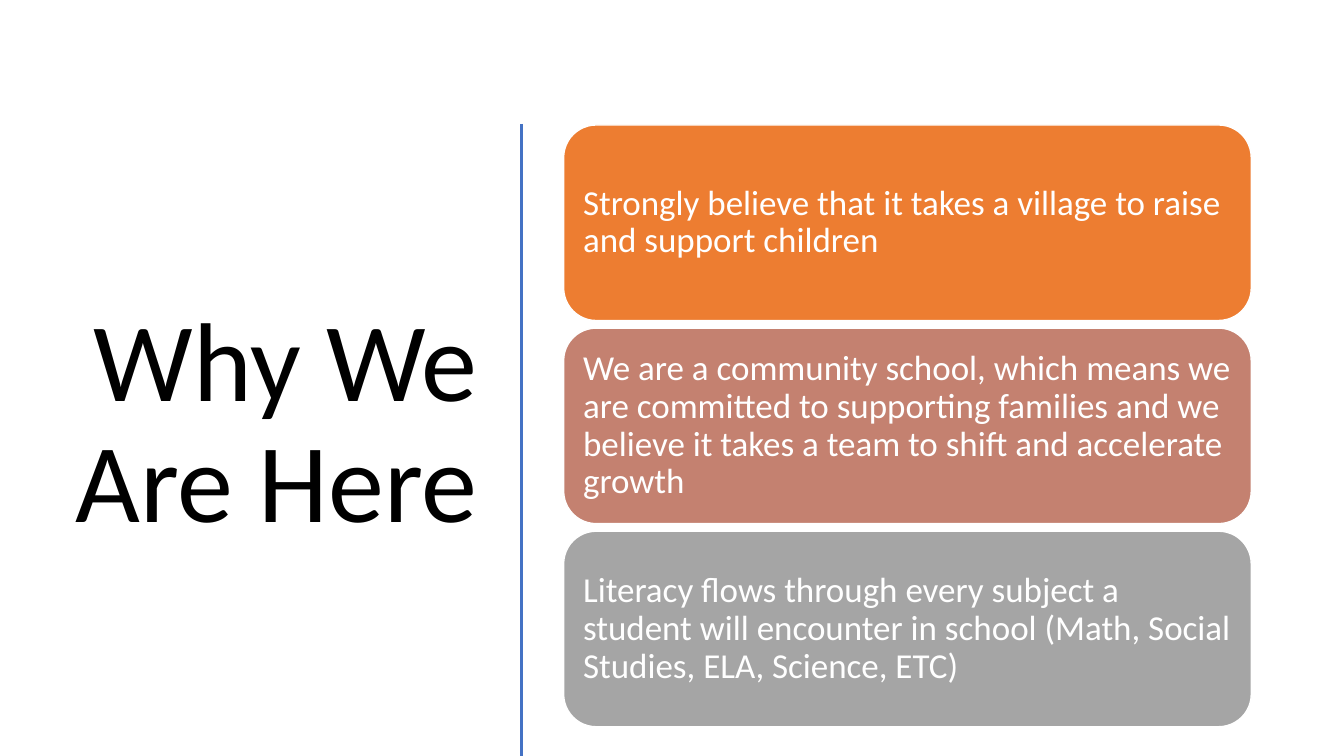
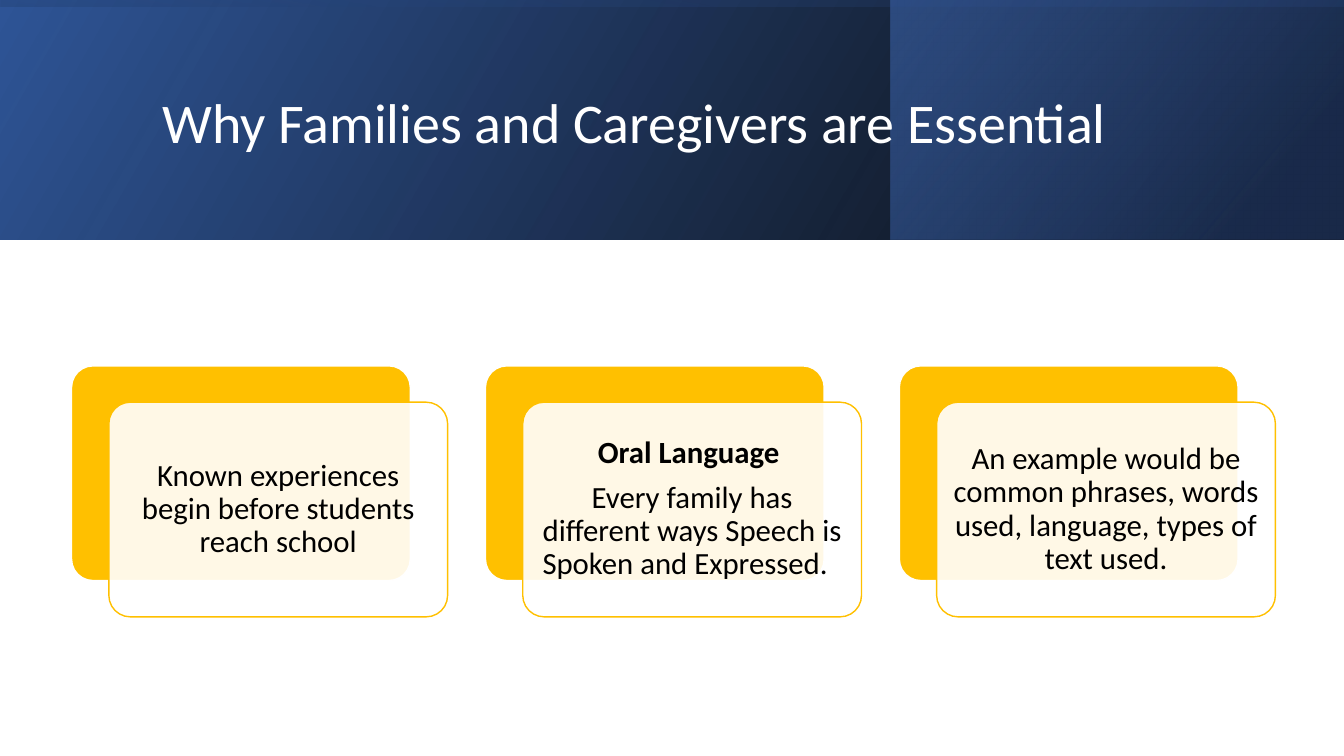
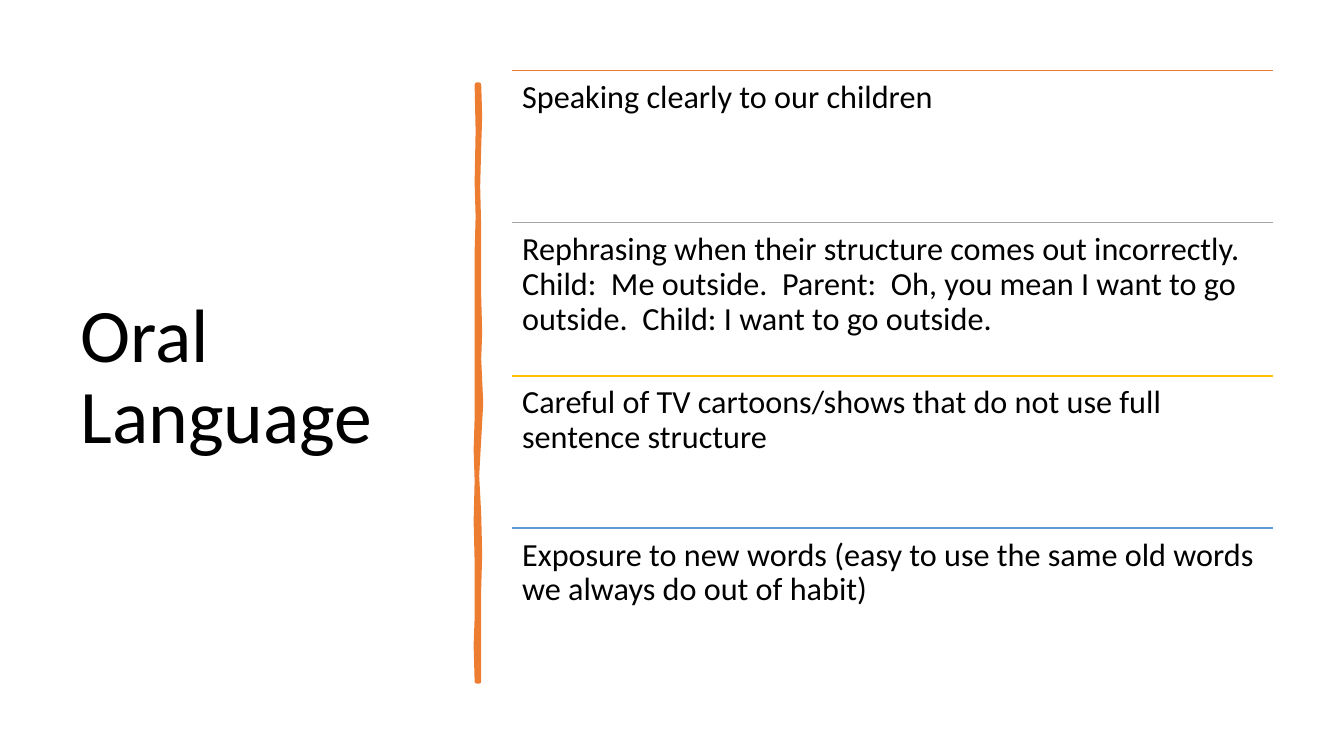
from lxml.etree import SubElement
from pptx import Presentation
from pptx.dml.color import RGBColor
from pptx.enum.shapes import MSO_CONNECTOR, MSO_SHAPE
from pptx.enum.text import MSO_ANCHOR, MSO_AUTO_SIZE, PP_ALIGN
from pptx.oxml.ns import qn
from pptx.util import Pt

# Shared look: 100 px to the inch
PX = 9144
WIDE, HIGH = 1333, 750
FONT = "Calibri"
BLACK, WHITE = "000000", "FFFFFF"
ORANGE, ROSE, GRAY = "ED7D31", "C48170", "A5A5A5"
GOLD, BLUE, SKY = "FFC000", "4472C4", "5B9BD5"
LEFT, MID, RIGHT = PP_ALIGN.LEFT, PP_ALIGN.CENTER, PP_ALIGN.RIGHT

# Slide 1: heading and three cards
WHY = "Why We Are Here"
CARDS = [
    ("Strongly believe that it takes a village to raise and support children", ORANGE),
    ("We are a community school, which means we are committed to supporting "
     "families and we believe it takes a team to shift and accelerate growth", ROSE),
    ("Literacy flows through every subject a student will encounter in school "
     "(Math, Social Studies, ELA, Science, ETC)", GRAY),
]

# Slide 2: banner layers (box, turn, angle, stops of place, colour, opacity)
FAMILY = "Why Families and Caregivers are Essential"
BANDS = [
    ((0, 0, WIDE, 238), 0, 330, [(0, BLACK, 96), (100, "2F5597", 100)]),
    ((883, 0, 449, 238), 0, 320, [(19, "203864", 68), (100, BLUE, 48)]),
    ((548, -548, 238, WIDE), 270, 350, [(23, "2F5597", 16), (99, BLACK, 45)]),
]
# Each tile holds paragraphs of (text, bold)
TILES = [
    [("Known experiences begin before students reach school", False)],
    [("Oral Language ", True),
     ("Every family has different ways Speech is Spoken and Expressed.  ", False)],
    [("An example would be common phrases, words used, language, types of text used.",
      False)],
]

# Slide 3: heading and four ruled rows
ORAL = "Oral Language"
ROWS = [
    ("Speaking clearly to our children", ORANGE),
    ("Rephrasing when their structure comes out incorrectly.  Child:  Me outside.  "
     "Parent:  Oh, you mean I want to go outside.  Child: I want to go outside.", GRAY),
    ("Careful of TV cartoons/shows that do not use full sentence structure", GOLD),
    ("Exposure to new words (easy to use the same old words we always do out of habit)",
     SKY),
]
# Brush stroke: corners down the right side, then up the left
STROKE = [
    (475, 84), (476, 115), (475, 146), (474, 185), (475, 226), (475, 294),
    (476, 330), (475, 356), (477, 400), (475, 436), (473, 472), (475, 510),
    (476, 550), (475, 584), (475, 630), (475, 676),
    (473, 676), (472, 640), (473, 613), (473, 557), (472, 517), (473, 477),
    (472, 446), (473, 415), (473, 335), (473, 290), (473, 250), (474, 215),
    (473, 181), (474, 130), (473, 84),
]


def emu(*nums):
    return [round(n * PX) for n in nums]


def rgb(code):
    return RGBColor.from_string(code)


def write(shape, paras, size, color, align=LEFT, anchor=MSO_ANCHOR.MIDDLE, pad=None):
    """Fill a shape with paragraphs of (text, bold)."""
    frame = shape.text_frame
    frame.word_wrap = True
    frame.auto_size = MSO_AUTO_SIZE.NONE
    frame.vertical_anchor = anchor
    if pad is not None:
        frame.margin_left = frame.margin_right = pad * PX
        frame.margin_top = frame.margin_bottom = pad * PX
    for i, (text, bold) in enumerate(paras):
        para = frame.add_paragraph() if i else frame.paragraphs[0]
        para.alignment = align
        para.line_spacing = 0.9
        para.space_before = Pt(8 if i else 0)
        run = para.add_run()
        run.text = text
        run.font.name, run.font.size, run.font.bold = FONT, Pt(size), bold
        run.font.color.rgb = rgb(color)


def start(deck, text, box, size, color=BLACK, align=LEFT):
    """Add a slide with its title."""
    slide = deck.slides.add_slide(deck.slide_layouts[5])
    title = slide.shapes.title
    title.left, title.top, title.width, title.height = emu(*box)
    write(title, [(text, False)], size, color, align)
    return slide


def block(slide, kind, box, fill=None, edge=None):
    shape = slide.shapes.add_shape(kind, *emu(*box))
    shape.shadow.inherit = False
    if fill:
        shape.fill.solid()
        shape.fill.fore_color.rgb = rgb(fill)
    if edge:
        shape.line.color.rgb = rgb(edge)
        shape.line.width = Pt(1)
    else:
        shape.line.fill.background()
    return shape


def fade(node, part):
    """Set the opacity, in percent, of a colour element."""
    SubElement(node, qn("a:alpha")).set("val", str(part * 1000))


def rule(slide, ends, color, width):
    line = slide.shapes.add_connector(MSO_CONNECTOR.STRAIGHT, *emu(*ends))
    line.line.color.rgb = rgb(color)
    line.line.width = Pt(width)
    SubElement(line.element.spPr, qn("a:effectLst"))


def band(slide, box, turn, angle, stops):
    """Add a mirrored rectangle with a see-through gradient."""
    shape = block(slide, MSO_SHAPE.RECTANGLE, box)
    shape.rotation = turn
    props = shape.element.spPr
    props.find(qn("a:xfrm")).set("flipH", "1")
    shape.fill.gradient()
    grad = props.find(qn("a:gradFill"))
    for kid in list(grad):
        grad.remove(kid)
    items = SubElement(grad, qn("a:gsLst"))
    for place, color, part in stops:
        stop = SubElement(items, qn("a:gs"))
        stop.set("pos", str(place * 1000))
        tint = SubElement(stop, qn("a:srgbClr"))
        tint.set("val", color)
        fade(tint, part)
    SubElement(grad, qn("a:lin")).set("ang", str(angle * 60000))


def reasons(deck):
    slide = start(deck, WHY, (53, 117, 431, 611), 80, align=RIGHT)
    rule(slide, (517, 123, 517, 750), BLUE, 2)
    top, tall, end = 124, 194, 721
    step = (end - top - tall) / (len(CARDS) - 1)
    for i, (text, color) in enumerate(CARDS):
        card = block(slide, MSO_SHAPE.ROUNDED_RECTANGLE,
                     (559, top + i * step, 682, tall), color, WHITE)
        write(card, [(text, False)], 25, WHITE, pad=10)


def family(deck):
    slide = start(deck, FAMILY, (151, 38, 1063, 172), 40, WHITE)
    for item in BANDS:
        band(slide, *item)
    # Bring the title above the banner
    slide.shapes.element.append(slide.shapes.title.element)
    first, last = 108, 929
    step = (last - first) / (len(TILES) - 1)
    for i, paras in enumerate(TILES):
        left = first + i * step
        for dx, dy, fill, edge in [(-37, -36, GOLD, WHITE), (0, 0, WHITE, GOLD)]:
            tile = block(slide, MSO_SHAPE.ROUNDED_RECTANGLE,
                         (left + dx, 399 + dy, 336, 213), fill, edge)
            tile.adjustments[0] = 0.1
        # The front tile is glassy and carries the text
        fade(tile.element.spPr.find(qn("a:solidFill"))[0], 90)
        write(tile, paras, 22, BLACK, MID, pad=9)


def speech(deck):
    slide = start(deck, ORAL, (70, 70, 374, 611), 54)
    dots = [emu(*dot) for dot in STROKE]
    pen = slide.shapes.build_freeform(*dots[0], scale=1.0)
    pen.add_line_segments(dots[1:], close=True)
    brush = pen.convert_to_shape()
    brush.shadow.inherit = False
    brush.fill.solid()
    brush.fill.fore_color.rgb = rgb(ORANGE)
    brush.line.color.rgb = rgb(ORANGE)
    brush.line.width = Pt(3.25)
    left, top, wide, last = 508, 70, 755, 524
    tall = (last - top) / (len(ROWS) - 1)
    for i, (text, color) in enumerate(ROWS):
        y = round(top + i * tall)
        rule(slide, (left, y, left + wide, y), color, 1)
        row = slide.shapes.add_textbox(*emu(left, y, wide, tall))
        write(row, [(text, False)], 23, BLACK, anchor=MSO_ANCHOR.TOP, pad=10)


def main():
    deck = Presentation()
    deck.slide_width, deck.slide_height = emu(WIDE, HIGH)
    for make in (reasons, family, speech):
        make(deck)
    deck.save("out.pptx")


if __name__ == "__main__":
    main()
